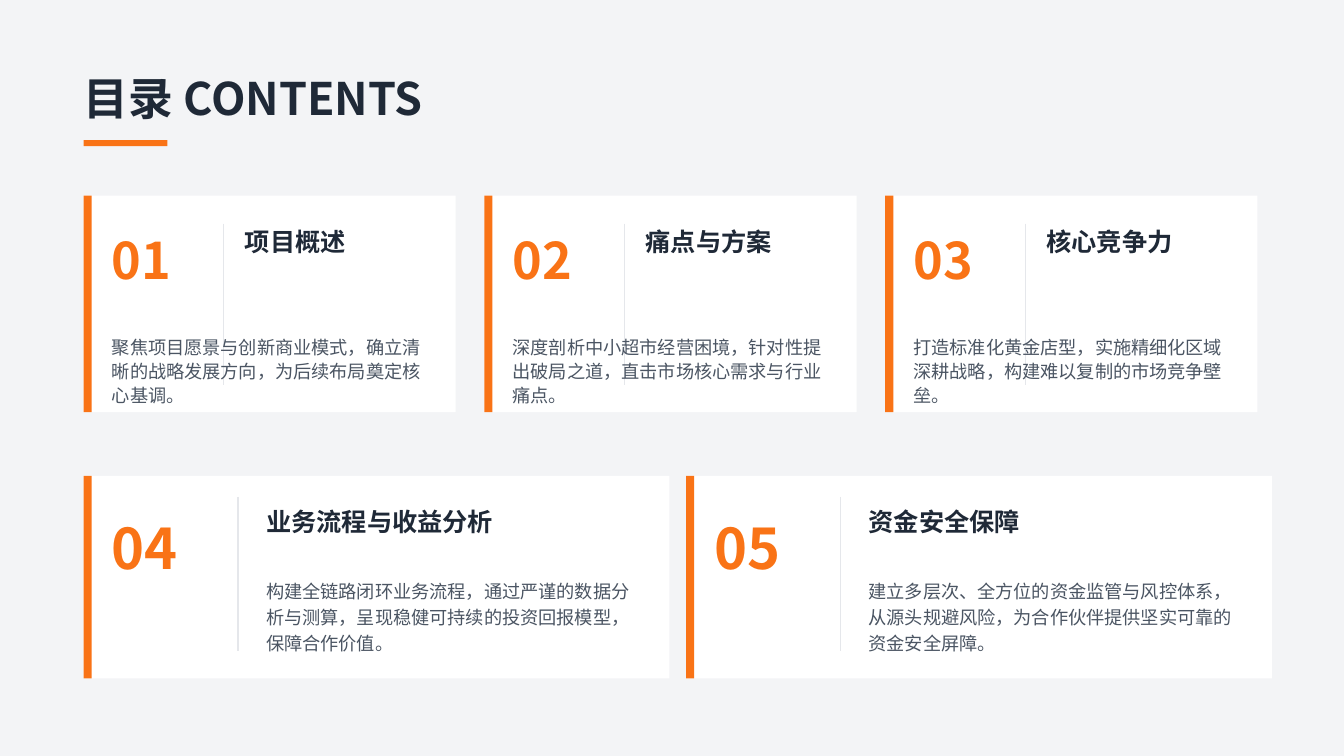
from lxml import etree
from pptx import Presentation
from pptx.dml.color import RGBColor
from pptx.enum.shapes import MSO_CONNECTOR, MSO_SHAPE
from pptx.enum.text import MSO_ANCHOR
from pptx.oxml.ns import qn
from pptx.util import Inches, Pt

FONT = "Noto Sans CJK SC"
COLORS = {
    "background": "F3F4F6",
    "card": "FFFFFF",
    "accent": "F97316",
    "heading": "1F2937",
    "body": "4B5563",
    "divider": "E5E7EB",
}

deck = Presentation()
deck.slide_width, deck.slide_height = Inches(13.33), Inches(7.5)
page = deck.slides.add_slide(deck.slide_layouts[6])
page.background.fill.solid()
page.background.fill.fore_color.rgb = RGBColor.from_string(COLORS["background"])


def add_block(left, top, width, height, color):
    block = page.shapes.add_shape(
        MSO_SHAPE.RECTANGLE, Inches(left), Inches(top), Inches(width), Inches(height)
    )
    block.shadow.inherit = False
    block.fill.solid()
    block.fill.fore_color.rgb = RGBColor.from_string(COLORS[color])
    block.line.fill.background()


def add_text(text, left, top, width, height, size, color, bold=True, spacing=1.25):
    box = page.shapes.add_textbox(Inches(left), Inches(top), Inches(width), Inches(height))
    frame = box.text_frame
    frame.word_wrap = True
    frame.vertical_anchor = MSO_ANCHOR.MIDDLE
    frame.margin_left = frame.margin_top = frame.margin_right = frame.margin_bottom = 0
    para = frame.paragraphs[0]
    para.line_spacing = spacing
    span = para.add_run()
    span.text = text
    span.font.name = FONT
    span.font.size = Pt(size)
    span.font.bold = bold
    span.font.color.rgb = RGBColor.from_string(COLORS[color])
    # Chinese characters take their typeface from a:ea
    etree.SubElement(span.font._element, qn("a:ea"), typeface=FONT)


add_text("目录 CONTENTS", 0.83, 0.56, 11.67, 0.69, 32, "heading")
add_block(0.83, 1.39, 0.83, 0.06, "accent")

# Offsets named *_x and *_y are measured from the card's top left corner
ROWS = [
    {
        "top": 1.94, "width": 3.69, "height": 2.15, "step": 3.975,
        "number_size": 36, "number_box": (0.83, 0.69),
        "divider_x": 1.39, "divider_y": (0.28, 1.88),
        "title_x": 1.6, "title_width": 1.94,
        "body_x": 0.28, "body_y": 1.39, "body_box": (3.19, 0.69), "spacing": 1.08,
        "cards": [
            ("01", "项目概述",
             "聚焦项目愿景与创新商业模式，确立清晰的战略发展方向，为后续布局奠定核心基调。"),
            ("02", "痛点与方案",
             "深度剖析中小超市经营困境，针对性提出破局之道，直击市场核心需求与行业痛点。"),
            ("03", "核心竞争力",
             "打造标准化黄金店型，实施精细化区域深耕战略，构建难以复制的市场竞争壁垒。"),
        ],
    },
    {
        "top": 4.72, "width": 5.81, "height": 2.01, "step": 5.975,
        "number_size": 40, "number_box": (0.97, 0.83),
        "divider_x": 1.53, "divider_y": (0.21, 1.74),
        "title_x": 1.81, "title_width": 3.75,
        "body_x": 1.81, "body_y": 0.97, "body_box": (3.75, 0.83), "spacing": 1.17,
        "cards": [
            ("04", "业务流程与收益分析",
             "构建全链路闭环业务流程，通过严谨的数据分析与测算，呈现稳健可持续的投资回报模型，保障合作价值。"),
            ("05", "资金安全保障",
             "建立多层次、全方位的资金监管与风控体系，从源头规避风险，为合作伙伴提供坚实可靠的资金安全屏障。"),
        ],
    },
]

for row in ROWS:
    top = row["top"]
    for index, (number, title, body) in enumerate(row["cards"]):
        left = 0.83 + index * row["step"]
        add_block(left, top, row["width"], row["height"], "card")
        add_block(left, top, 0.08, row["height"], "accent")
        add_text(number, left + 0.28, top + 0.21, *row["number_box"],
                 row["number_size"], "accent")

        divider_x = Inches(left + row["divider_x"])
        start_y, end_y = (Inches(top + offset) for offset in row["divider_y"])
        divider = page.shapes.add_connector(
            MSO_CONNECTOR.STRAIGHT, divider_x, start_y, divider_x, end_y
        )
        divider.line.color.rgb = RGBColor.from_string(COLORS["divider"])
        divider.line.width = Pt(1)
        etree.SubElement(divider._element.spPr, qn("a:effectLst"))

        add_text(title, left + row["title_x"], top + 0.21, row["title_width"], 0.42,
                 18, "heading")
        add_text(body, left + row["body_x"], top + row["body_y"], *row["body_box"],
                 13, "body", bold=False, spacing=row["spacing"])

deck.save("out.pptx")
